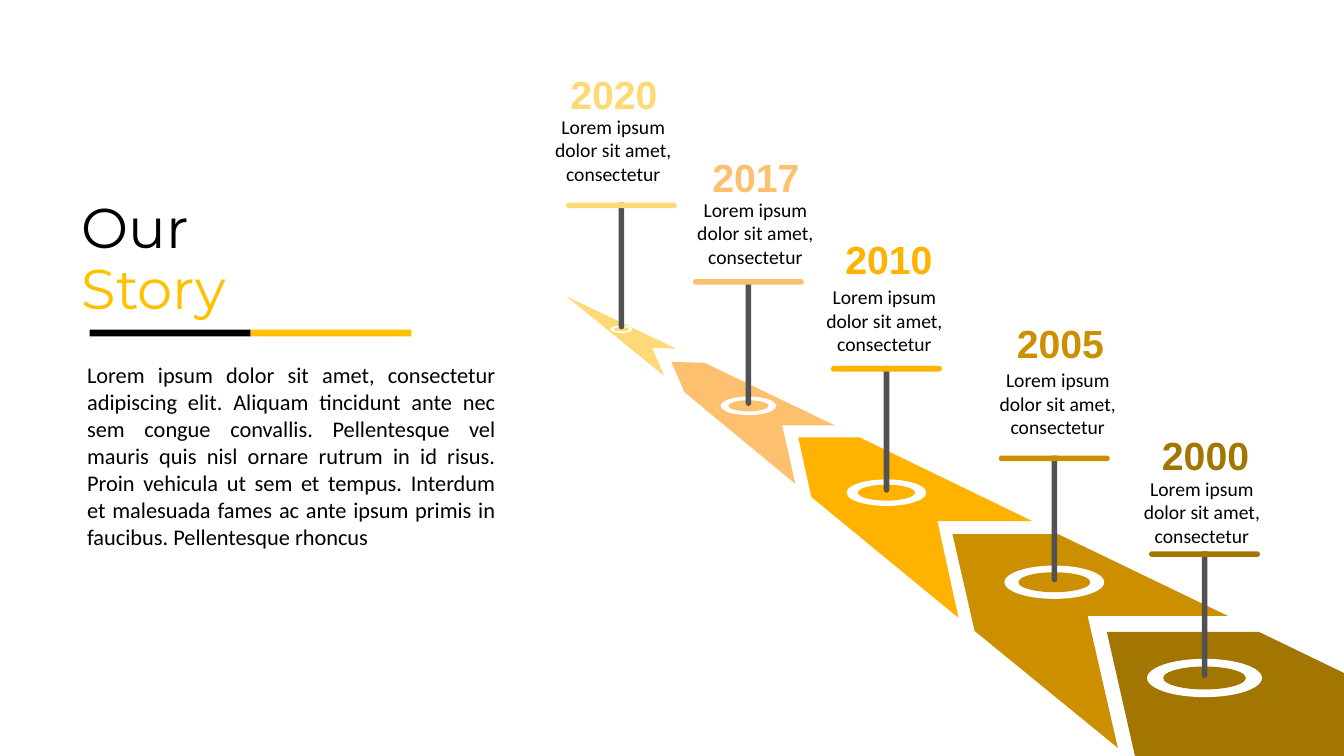
from collections import namedtuple

from pptx import Presentation
from pptx import util as u
from pptx.dml import color
from pptx.enum import shapes, text

Milestone = namedtuple(
    "Milestone", "year tint pin_x bar_y ring_width year_x year_y caption_x caption_y arrow")

CAPTION = "Lorem ipsum dolor sit amet, consectetur"
STORY = (
    "Lorem ipsum dolor sit amet, consectetur adipiscing elit. Aliquam tincidunt ante nec sem "
    "congue convallis. Pellentesque vel mauris quis nisl ornare rutrum in id risus. Proin "
    "vehicula ut sem et tempus. Interdum et malesuada fames ac ante ipsum primis in faucibus. "
    "Pellentesque rhoncus"
)
MILESTONES = [
    Milestone("2020", "FED977", 443.9, 144.7, 15.8, 438.5, 46.8, 438.1, 77,
              [(465.8, 248.4), (483.1, 249.1), (404.6, 211.7), (474.5, 268.6)]),
    Milestone("2017", "FDC06F", 534.6, 199.4, 39.6, 540, 105.8, 539.6, 136.1,
              [(558.7, 303.8), (596.2, 303.8), (503.3, 259.2), (479.5, 258.5),
               (488.9, 280.1), (568.1, 345.6)]),
    Milestone("2010", "FFB200", 633.2, 261.4, 56.9, 635, 164.9, 631.8, 198.7,
              [(669.6, 372.2), (737.3, 372.2), (614.2, 312.5), (570.2, 312.5),
               (579.6, 355), (684.7, 441.4)]),
    Milestone("2005", "CC8F00", 753.1, 325.4, 71.3, 757.4, 224.6, 755.6, 257.8,
              [(776.9, 439.9), (877, 439.9), (756, 381.6), (680.4, 381.6),
               (696.2, 450.7), (798.5, 534.2)]),
    Milestone("2000", "A37602", 860.4, 393.8, 82.1, 861.1, 304.6, 858.6, 335.5,
              [(899.3, 451.4), (790.6, 451.4), (811.4, 542.9), (960.5, 542.9), (960.5, 481)]),
]


def rgb(code):
    return color.RGBColor.from_string(code)


def write(paragraph, words, font="Calibri", size=14, tint="000000", bold=False,
          align=text.PP_ALIGN.LEFT):
    paragraph.alignment = align
    run = paragraph.add_run()
    run.text = words
    run.font.name = font
    run.font.size = u.Pt(size)
    run.font.bold = bold
    run.font.color.rgb = rgb(tint)


class StorySlide:
    ink = "000000"
    accent = "FFC000"
    rod_tint = "525252"
    pin_height = 90.5
    stroke = 4
    bar_width = 79.2

    def __init__(self, deck):
        self.slide = deck.slides.add_slide(deck.slide_layouts[5])

    def paint(self, shape, tint):
        shape.fill.solid()
        shape.fill.fore_color.rgb = rgb(tint)
        shape.line.fill.background()
        shape.shadow.inherit = False

    def block(self, kind, left, top, width, height, tint):
        shape = self.slide.shapes.add_shape(
            kind, u.Pt(left), u.Pt(top), u.Pt(width), u.Pt(height))
        self.paint(shape, tint)
        return shape

    def oval(self, x, y, width, height, tint):
        self.block(shapes.MSO_SHAPE.OVAL, x - width / 2, y - height / 2, width, height, tint)

    def arrow(self, corners, tint):
        start, *rest = [(u.Pt(x), u.Pt(y)) for x, y in corners]
        outline = self.slide.shapes.build_freeform(*start)
        outline.add_line_segments(rest, close=True)
        self.paint(outline.convert_to_shape(), tint)

    def pin(self, x, top, ring_width, tint):
        base = top + self.pin_height
        self.oval(x, base, ring_width, ring_width / 3, "FFFFFF")
        self.oval(x, base, ring_width * 0.72, ring_width * 0.2, tint)
        rod = self.block(shapes.MSO_SHAPE.ROUND_2_SAME_RECTANGLE, x - self.stroke / 2, top,
                         self.stroke, self.pin_height, self.rod_tint)
        rod.adjustments[0] = 0.5
        rod.rotation = 180
        bar = self.block(shapes.MSO_SHAPE.ROUNDED_RECTANGLE, x - self.bar_width / 2, top,
                         self.bar_width, self.stroke, tint)
        bar.adjustments[0] = 0.5

    def label(self, words, left, top, width, height, inset=(7.2, 3.6),
              anchor=text.MSO_ANCHOR.TOP, **style):
        frame = self.slide.shapes.add_textbox(
            u.Pt(left), u.Pt(top), u.Pt(width), u.Pt(height)).text_frame
        frame.word_wrap = True
        frame.auto_size = text.MSO_AUTO_SIZE.SHAPE_TO_FIT_TEXT
        frame.vertical_anchor = anchor
        frame.margin_left = frame.margin_right = u.Pt(inset[0])
        frame.margin_top = frame.margin_bottom = u.Pt(inset[1])
        write(frame.paragraphs[0], words, **style)

    def prose(self, words, left, top, width, height, **style):
        self.label(words, left, top, width, height, inset=(9.6, 4.8),
                   anchor=text.MSO_ANCHOR.MIDDLE, **style)

    def heading(self, first, second):
        title = self.slide.shapes.title
        title.left, title.top, title.width, title.height = map(u.Pt, (51.1, 139.7, 296.6, 147.6))
        frame = title.text_frame
        frame.word_wrap = True
        frame.auto_size = text.MSO_AUTO_SIZE.NONE
        frame.vertical_anchor = text.MSO_ANCHOR.TOP
        line = frame.paragraphs[0]
        line.line_spacing = 0.9
        write(line, first, font="Montserrat", size=40, tint=self.ink)
        line.add_line_break()
        write(line, second, font="Montserrat", size=40, tint=self.accent)

    def underline(self, left, top, width, height):
        for step, tint in enumerate((self.ink, self.accent)):
            self.block(shapes.MSO_SHAPE.RECTANGLE, left + step * width, top, width, height, tint)

    def milestone(self, stop):
        self.arrow(stop.arrow, stop.tint)
        self.pin(stop.pin_x, stop.bar_y, stop.ring_width, stop.tint)
        self.prose(CAPTION, stop.caption_x - 56.5, stop.caption_y, 113, 60.5,
                   align=text.PP_ALIGN.CENTER)
        self.label(stop.year, stop.year_x - 39.6, stop.year_y, 79.2, 41, font="Arial", size=28,
                   tint=stop.tint, bold=True, align=text.PP_ALIGN.CENTER)


def main():
    deck = Presentation()
    deck.slide_width, deck.slide_height = u.Pt(960), u.Pt(540)
    story = StorySlide(deck)
    story.heading("Our ", "Story")
    for stop in MILESTONES:
        story.milestone(stop)
    story.prose(STORY, 52.6, 252.7, 311, 145.4, size=16, align=text.PP_ALIGN.JUSTIFY)
    story.underline(64.1, 235.4, 114.9, 5)
    deck.save("out.pptx")


if __name__ == "__main__":
    main()
